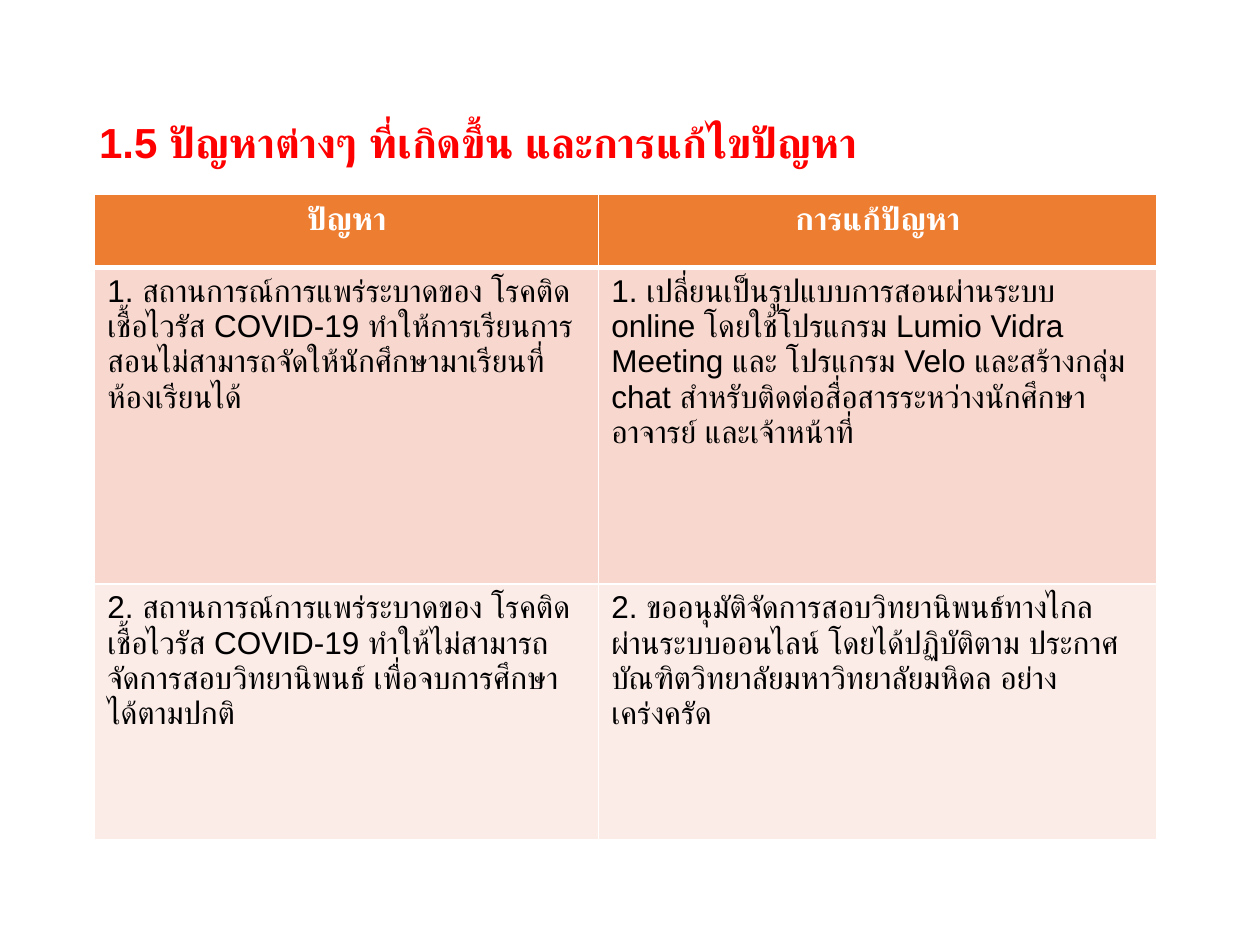
from lxml.etree import SubElement
from pptx import Presentation
from pptx.dml.color import RGBColor
from pptx.enum.lang import MSO_LANGUAGE_ID
from pptx.enum.text import MSO_ANCHOR, PP_ALIGN
from pptx.oxml.ns import qn
from pptx.util import Cm, Pt

COLORS = {
    "title": "FF0000",
    "header": "ED7D31",
    "band_dark": "F8D7CE",
    "band_light": "FCECE8",
    "white": "FFFFFF",
    "black": "000000",
}


def add_run(p, text, font, size, color, bold):
    r = p.add_run()
    r.text = text
    r.font.size = Pt(size)
    r.font.bold = bold
    r.font.color.rgb = RGBColor.from_string(COLORS[color])
    r.font.name = font
    r.font.language_id = MSO_LANGUAGE_ID.THAI
    SubElement(r.font._element, qn("a:cs"), typeface=font)


def add_border(cell, side, width):
    ln = SubElement(cell._tc.get_or_add_tcPr(), qn(f"a:ln{side}"), w=str(Pt(width)))
    fill = SubElement(ln, qn("a:solidFill"))
    SubElement(fill, qn("a:srgbClr"), val=COLORS["white"])


prs = Presentation()
prs.slide_width = Cm(25.4)
prs.slide_height = Cm(19.05)
s = prs.slides.add_slide(prs.slide_layouts[6])

sp = s.shapes.add_textbox(Cm(1.75), Cm(2.13), Cm(21.9), Cm(1.6))
tf = sp.text_frame
tf.word_wrap = True
tf.vertical_anchor = MSO_ANCHOR.MIDDLE
p = tf.paragraphs[0]
p.line_spacing = 0.9
add_run(p, "1.5 ปัญหาต่างๆ ที่เกิดขึ้น และการแก้ไขปัญหา", "Arial", 24, "title", True)

rows = [
    ("header", ["ปัญหา", "การแก้ปัญหา"]),
    ("band_dark", [
        "1. สถานการณ์การแพร่ระบาดของ โรคติดเชื้อไวรัส COVID-19 "
        "ทำให้การเรียนการสอนไม่สามารถจัดให้นักศึกษามาเรียนที่ห้องเรียนได้",
        "1. เปลี่ยนเป็นรูปแบบการสอนผ่านระบบ online โดยใช้โปรแกรม Lumio Vidra Meeting "
        "และ โปรแกรม Velo และสร้างกลุ่ม chat สำหรับติดต่อสื่อสารระหว่างนักศึกษา "
        "อาจารย์ และเจ้าหน้าที่",
    ]),
    ("band_light", [
        "2. สถานการณ์การแพร่ระบาดของ โรคติดเชื้อไวรัส COVID-19 "
        "ทำให้ไม่สามารถจัดการสอบวิทยานิพนธ์ เพื่อจบการศึกษาได้ตามปกติ",
        "2. ขออนุมัติจัดการสอบวิทยานิพนธ์ทางไกล ผ่านระบบออนไลน์ โดยได้ปฏิบัติตาม "
        "ประกาศบัณฑิตวิทยาลัยมหาวิทยาลัยมหิดล อย่างเคร่งครัด",
    ]),
]
col_widths = [10.16, 11.25]
row_heights = [1.47, 6.38, 5.16]

table = s.shapes.add_table(
    len(rows), len(col_widths), Cm(1.91), Cm(3.92), Cm(sum(col_widths)), Cm(sum(row_heights))
).table
for column, width in zip(table.columns, col_widths):
    column.width = Cm(width)

for i, (fill, texts) in enumerate(rows):
    table.rows[i].height = Cm(row_heights[i])
    for j, text in enumerate(texts):
        cell = table.cell(i, j)
        for side in "LRTB":
            thick = (i, side) in [(0, "B"), (1, "T")]
            add_border(cell, side, 3 if thick else 1)
        cell.fill.solid()
        cell.fill.fore_color.rgb = RGBColor.from_string(COLORS[fill])
        p = cell.text_frame.paragraphs[0]
        if i == 0:
            p.alignment = PP_ALIGN.CENTER
            add_run(p, text, "Calibri", 18, "white", True)
        else:
            add_run(p, text, "Arial", 18, "black", False)

prs.save("out.pptx")
